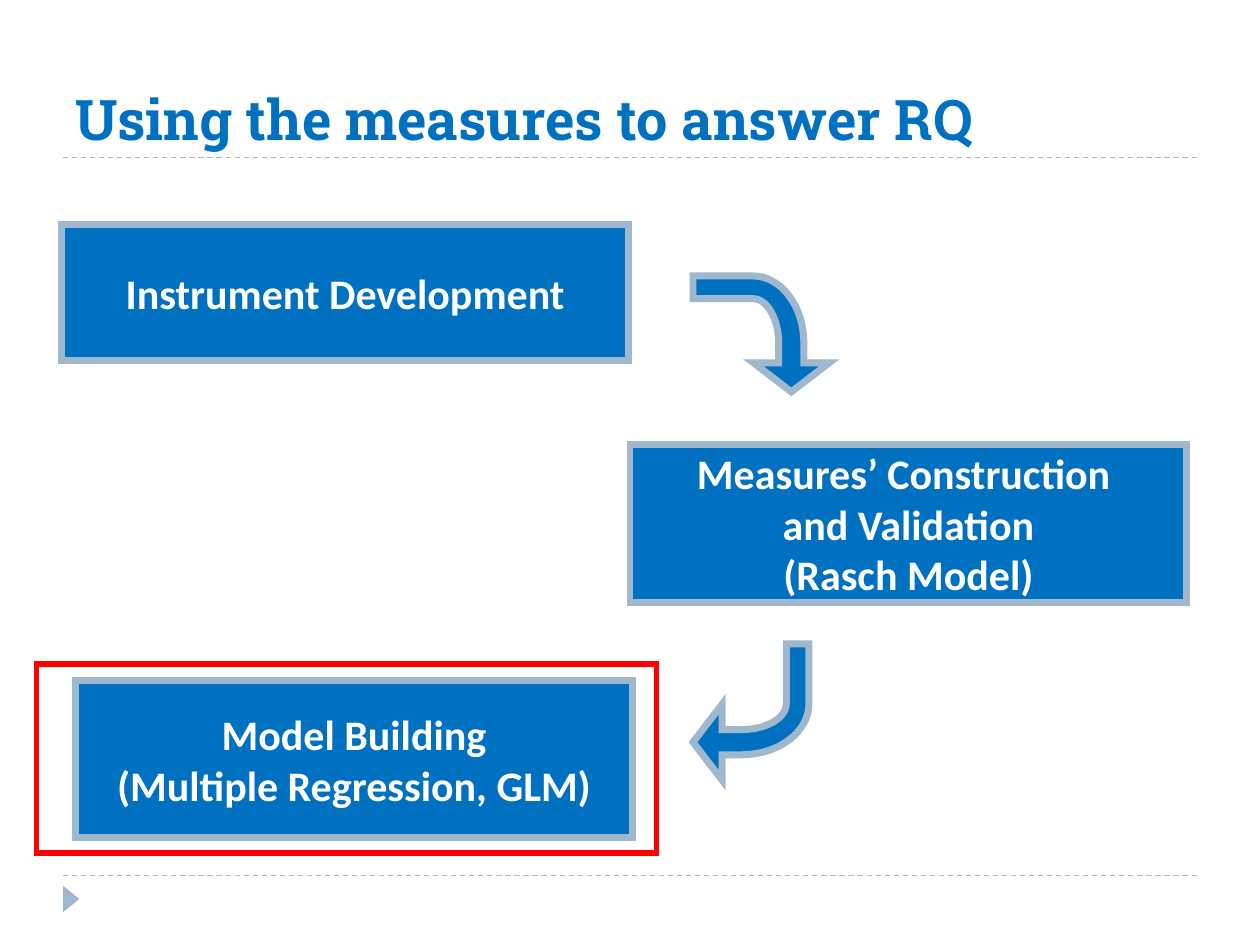
from math import cos, pi, sin

from lxml.etree import SubElement
from pptx import Presentation
from pptx.dml.color import RGBColor
from pptx.enum.dml import MSO_LINE
from pptx.enum.shapes import MSO_CONNECTOR, MSO_SHAPE
from pptx.enum.text import MSO_ANCHOR, PP_ALIGN
from pptx.oxml.ns import qn
from pptx.util import Inches, Pt

BLUE = RGBColor(0x00, 0x70, 0xC0)
STEEL = RGBColor(0x9F, 0xB8, 0xCD)
RED = RGBColor(0xFF, 0x00, 0x00)
WHITE = RGBColor(0xFF, 0xFF, 0xFF)

WIDTH, HEIGHT = Inches(10), Inches(7.5)
COLUMNS, ROWS = 100, 75
ARROW_UNITS = 10  # outline units to one grid column

TITLE_FONT = {"name": "Roboto Slab", "size": Pt(32), "bold": True}
STEP_FONT = {"name": "Calibri", "size": Pt(24), "bold": True}

STEPS = [
    ((4.9, 17.8, 45, 10.8), ["Instrument Development"]),
    ((50, 35.3, 44.2, 12.5),
     ["Measures’ Construction ", "and Validation", "(Rasch Model)"]),
    ((6, 54, 44.2, 12.5), ["Model Building", "(Multiple Regression, GLM)"]),
]
ARROWS = [(55.8, 21.1, 90), (55, 51.1, 180)]


def across(columns):
    return int(WIDTH * columns / COLUMNS)


def down(rows):
    return int(HEIGHT * rows / ROWS)


def place(left, top, width, height):
    """Turn a grid box into slide lengths."""
    return across(left), down(top), across(width), down(height)


def paint(shape, fill=None, line=None, width=0):
    shape.shadow.inherit = False
    if fill is None:
        shape.fill.background()
    else:
        shape.fill.solid()
        shape.fill.fore_color.rgb = fill
    if line is None:
        shape.line.fill.background()
    else:
        shape.line.color.rgb = line
        shape.line.width = Pt(width)
        outline = shape._element.spPr.find(qn("a:ln"))
        SubElement(outline, qn("a:miter"), lim="800000")


def write(shape, lines, font, color, alignment, anchor, wrap):
    frame = shape.text_frame
    frame.word_wrap = wrap
    frame.vertical_anchor = anchor
    for index, line in enumerate(lines):
        paragraph = frame.add_paragraph() if index else frame.paragraphs[0]
        paragraph.alignment = alignment
        run = paragraph.add_run()
        run.text = line
        for name, value in font.items():
            setattr(run.font, name, value)
        run.font.color.rgb = color


def add_rule(slide, row):
    start, end = across(5), across(95)
    rule = slide.shapes.add_connector(
        MSO_CONNECTOR.STRAIGHT, start, down(row), end, down(row))
    rule.line.color.rgb = STEEL
    rule.line.width = Pt(0.75)
    rule.line.dash_style = MSO_LINE.DASH
    SubElement(rule._element.spPr, qn("a:effectLst"))


def add_title(slide, text):
    title = slide.shapes.add_textbox(*place(5, 1.7, 90, 10.8))
    write(title, [text], TITLE_FONT, BLUE, PP_ALIGN.LEFT,
          MSO_ANCHOR.BOTTOM, True)


def add_step(slide, box, lines):
    step = slide.shapes.add_shape(MSO_SHAPE.RECTANGLE, *place(*box))
    paint(step, BLUE, STEEL, 4)
    write(step, lines, STEP_FONT, WHITE, PP_ALIGN.CENTER,
          MSO_ANCHOR.MIDDLE, False)


def bend(radius_x, radius_y, steps=16):
    """Points of a quarter ellipse, from its top to its left end."""
    angles = [pi / 2 * step / steps for step in range(steps + 1)]
    return [(53.5 - radius_x * sin(angle), 60.5 - radius_y * cos(angle))
            for angle in angles]


def add_bent_arrow(slide, left, top, rotation):
    """Arrow that rises, bends and points right before it is rotated."""
    head = [(92, 30), (69, 0), (69, 20)]
    tail = [(0, 108), (18, 108)]
    inner = bend(35.5, 20.5)[::-1]
    points = head + bend(53.5, 40.5) + tail + inner + [(69, 40), (69, 60)]
    fine = [(x * 10, y * 10) for x, y in points]
    builder = slide.shapes.build_freeform(
        *fine[0], scale=across(1) / ARROW_UNITS / 10)
    builder.add_line_segments(fine[1:], close=True)
    arrow = builder.convert_to_shape(across(left), down(top))
    arrow.rotation = rotation
    paint(arrow, BLUE, STEEL, 4)


def main():
    presentation = Presentation()
    presentation.slide_width, presentation.slide_height = WIDTH, HEIGHT
    slide = presentation.slides.add_slide(presentation.slide_layouts[6])

    for row in (69.5, 12.5):
        add_rule(slide, row)
    marker = slide.shapes.add_shape(
        MSO_SHAPE.ISOSCELES_TRIANGLE, *place(4.6, 70.7, 2.1, 1.3))
    marker.rotation = 90
    paint(marker, STEEL)

    add_title(slide, "Using the measures to answer RQ")
    for box, lines in STEPS:
        add_step(slide, box, lines)
    for left, top, rotation in ARROWS:
        add_bent_arrow(slide, left, top, rotation)
    highlight = slide.shapes.add_shape(
        MSO_SHAPE.RECTANGLE, *place(2.9, 52.7, 49.2, 15))
    paint(highlight, line=RED, width=3)

    presentation.save("out.pptx")


if __name__ == "__main__":
    main()
